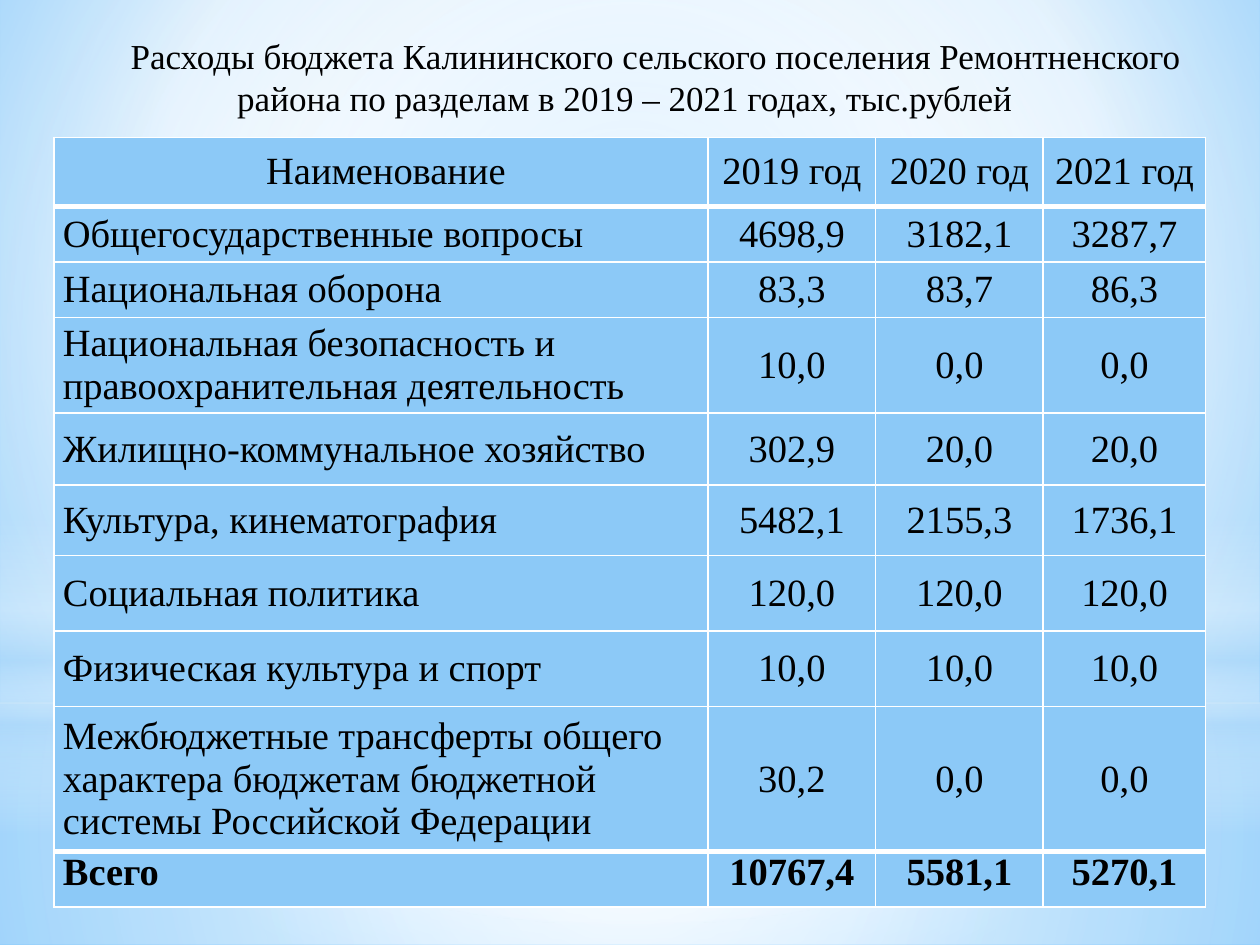
from lxml.etree import SubElement
from pptx import Presentation
from pptx.dml.color import RGBColor
from pptx.enum.shapes import MSO_SHAPE as Shape
from pptx.enum.text import MSO_ANCHOR as Anchor, PP_ALIGN as Align
from pptx.oxml.ns import qn
from pptx.util import Inches, Pt

FONT = "Times New Roman"
COLORS = {"text": "000000", "cell": "8CC9F7", "white": "FFFFFF",
          "haze": "B4DCFA", "sky": "9ED5FF", "deep": "5BB9FF"}

TITLE = ("Расходы бюджета Калининского сельского поселения Ремонтненского "
         "района по разделам в 2019 – 2021 годах, тыс.рублей")
EXPENSES = [
    (" Наименование", "2019 год", "2020 год", "2021 год"),
    ("Общегосударственные вопросы", "4698,9", "3182,1", "3287,7"),
    ("Национальная оборона", "83,3", "83,7", "86,3"),
    ("Национальная безопасность и правоохранительная деятельность", "10,0", "0,0", "0,0"),
    ("Жилищно-коммунальное хозяйство", "302,9", "20,0", "20,0"),
    ("Культура, кинематография", "5482,1", "2155,3", "1736,1"),
    ("Социальная политика", "120,0", "120,0", "120,0"),
    ("Физическая культура и спорт", "10,0", "10,0", "10,0"),
    ("Межбюджетные трансферты общего характера бюджетам бюджетной "
     "системы Российской Федерации", "30,2", "0,0", "0,0"),
    ("Всего", "10767,4", "5581,1", "5270,1"),
]
COLUMN_WIDTHS = [5.19, 1.33, 1.33, 1.29]
ROW_HEIGHTS = [0.55, 0.44, 0.44, 0.76, 0.57, 0.56, 0.6, 0.6, 1.15, 0.44]

# Gradient stops: position, colour, opacity (all in percent).
# Focus: left, top, right and bottom insets of a circular gradient; None is vertical.
CENTER = (50, 50, 50, 50)
SKY_STOPS = [(0, "sky", 100), (60, "white", 100), (100, "deep", 100)]
SKY_FOCUS = (20, 10, 20, 60)
GLOWS = [
    (Shape.RECTANGLE, (0, 5.58, 10, 1.92), CENTER,
     [(0, "white", 91), (37, "white", 76), (100, "haze", 79)]),
    (Shape.RECTANGLE, (0, 0, 10, 5.58), CENTER,
     [(0, "white", 89), (48, "white", 62), (100, "haze", 79)]),
    (Shape.RECTANGLE, (0, 4.12, 10, 2.5), None,
     [(0, "white", 0), (29, "white", 30), (45, "haze", 40),
      (55, "white", 26), (65, "haze", 60), (100, "white", 0)]),
    (Shape.OVAL, (0, 1.75, 10, 5.58), CENTER,
     [(0, "white", 100), (56, "white", 0)]),
]


def rgb(name):
    return RGBColor.from_string(COLORS[name])


def percent(value):
    return str(value * 1000)


def set_gradient(fill, owner, stops, focus):
    """Give fill, which belongs to the owner element, the stops and focus."""
    fill.gradient()
    gradient = owner.find(".//" + qn("a:gradFill"))
    for child in list(gradient):
        gradient.remove(child)
    stop_list = SubElement(gradient, qn("a:gsLst"))
    for position, color, opacity in stops:
        stop = SubElement(stop_list, qn("a:gs"), pos=percent(position))
        color_node = SubElement(stop, qn("a:srgbClr"), val=COLORS[color])
        if opacity < 100:
            SubElement(color_node, qn("a:alpha"), val=percent(opacity))
    if focus:
        circle = SubElement(gradient, qn("a:path"), {"path": "circle"})
        SubElement(circle, qn("a:fillToRect"),
                   {side: percent(inset) for side, inset in zip("ltrb", focus)})
    else:
        SubElement(gradient, qn("a:lin"), ang=str(90 * 60000), scaled="0")


def set_borders(cell, top, bottom):
    properties = cell._tc.get_or_add_tcPr()
    for side, width in (("L", 1), ("R", 1), ("T", top), ("B", bottom)):
        line = SubElement(properties, qn("a:ln" + side), w=str(Pt(width)))
        line_fill = SubElement(line, qn("a:solidFill"))
        SubElement(line_fill, qn("a:srgbClr"), val=COLORS["white"])


def write(paragraph, text, size, align):
    paragraph.text = text
    paragraph.alignment = align
    paragraph.font.name = FONT
    paragraph.font.size = Pt(size)
    paragraph.font.color.rgb = rgb("text")


def add_background(slide):
    set_gradient(slide.background.fill, slide.element, SKY_STOPS, SKY_FOCUS)
    for outline, box, focus, stops in GLOWS:
        glow = slide.shapes.add_shape(outline, *map(Inches, box))
        glow.shadow.inherit = False
        glow.line.fill.background()
        set_gradient(glow.fill, glow.element, stops, focus)


def add_expenses(slide):
    table = slide.shapes.add_table(
        len(EXPENSES), len(COLUMN_WIDTHS), Inches(0.43), Inches(1.09),
        Inches(sum(COLUMN_WIDTHS)), Inches(sum(ROW_HEIGHTS))).table
    table.first_row = table.horz_banding = False
    for column, width in zip(table.columns, COLUMN_WIDTHS):
        column.width = Inches(width)
    for row, height in zip(table.rows, ROW_HEIGHTS):
        row.height = Inches(height)

    total = len(EXPENSES) - 1
    for r, record in enumerate(EXPENSES):
        for c, text in enumerate(record):
            cell = table.cell(r, c)
            cell.margin_left = cell.margin_right = Inches(0.07)
            cell.margin_top = cell.margin_bottom = 0
            cell.vertical_anchor = Anchor.TOP if r == total else Anchor.MIDDLE
            set_borders(cell, top=3 if r in (1, total) else 1,
                        bottom=3 if r in (0, total - 1) else 1)
            cell.fill.solid()
            cell.fill.fore_color.rgb = rgb("cell")
            paragraph = cell.text_frame.paragraphs[0]
            write(paragraph, text, 22, Align.LEFT if r and not c else Align.CENTER)
            paragraph.font.bold = r == total


def add_title(slide):
    frame = slide.shapes.add_textbox(
        Inches(0.39), Inches(0.22), Inches(9.14), Inches(0.77)).text_frame
    frame.word_wrap = True
    frame.vertical_anchor = Anchor.MIDDLE
    paragraph = frame.paragraphs[0]
    write(paragraph, TITLE, 20, Align.CENTER)
    paragraph._p.get_or_add_pPr().set("indent", str(Inches(0.49)))


def main():
    deck = Presentation()
    deck.slide_width, deck.slide_height = Inches(10), Inches(7.5)
    slide = deck.slides.add_slide(deck.slide_layouts[6])
    add_background(slide)
    add_expenses(slide)
    add_title(slide)
    deck.save("out.pptx")


if __name__ == "__main__":
    main()
